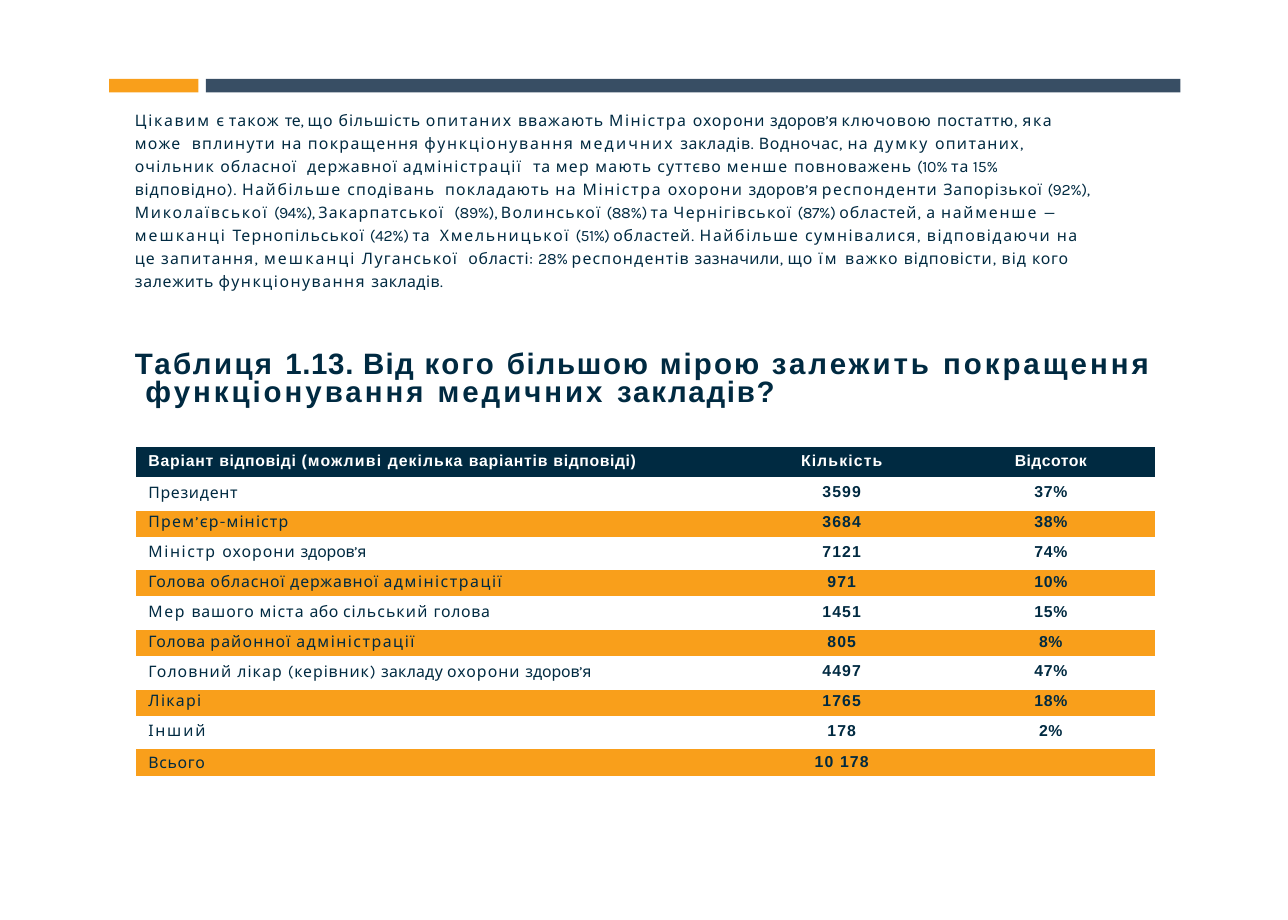
from lxml import etree
from pptx import Presentation
from pptx.dml.color import RGBColor
from pptx.enum.shapes import MSO_SHAPE
from pptx.enum.text import MSO_ANCHOR, MSO_AUTO_SIZE, PP_ALIGN
from pptx.oxml.ns import qn
from pptx.util import Inches, Pt

NAVY = RGBColor(0x00, 0x2A, 0x41)
SLATE = RGBColor(0x38, 0x4E, 0x64)
ORANGE = RGBColor(0xF9, 0x9F, 0x1B)
WHITE = RGBColor(0xFF, 0xFF, 0xFF)

# Each run is its text and its letter spacing in points
TITLE = [
    ("Таблиця ", 1.1), ("1.13. ", 0.3), ("Від ", 0.6), ("кого ", 1.1),
    ("більшою ", 0.8), ("мірою ", 1),
    ("залежить покращення функціонування медичних ", 1.4), ("закладів?", 0.8),
]
BODY = [
    ("Цікавим ", 0.8), ("є ", 0.2), ("також ", 0.5), ("те, ", -0.1), ("що ", 0.5),
    ("більшість ", 0.4), ("опитаних ", 0.7), ("вважають ", 0.5), ("Міністра ", 0.7),
    ("охорони ", 0.4), ("здоров’я ", 0), ("ключовою ", 0.5), ("постаттю, ", 0.3),
    ("яка ", 0.7), ("може  ", 0.6), ("вплинути на покращення ", 0.6),
    ("функціонування ", 0.8), ("медичних ", 0.9), ("закладів. Водночас, ", 0.3),
    ("на ", 0.6), ("думку ", 0.9), ("опитаних, очільник ", 0.6), ("обласної  ", 0.5),
    ("державної ", 0.5), ("адміністрації  ", 0.7), ("та ", 0.4), ("мер мають ", 0.6),
    ("суттєво ", 0.5), ("менше ", 0.7), ("повноважень ", 0.5), ("(10% ", -0.2),
    ("та", 0.4), (" 15% ", -0.1), ("відповідно). ", 0.4), ("Найбільше ", 0.7),
    ("сподівань  покладають ", 0.55), ("на ", 0.7), ("Міністра ", 0.8),
    ("охорони ", 0.6), ("здоров’я ", 0.1), ("респонденти ", 0.6),
    ("Запорізької ", 0.4), ("(92%), ", -0.2), ("Миколаївської ", 0.8),
    ("(94%), ", -0.3), ("Закарпатської  ", 0.6), ("(89%), ", -0.2),
    ("Волинської ", 0.6), ("(88%) ", -0.2), ("та ", 0.4), ("Чернігівської ", 0.6),
    ("(87%) ", -0.2), ("областей, ", 0.4), ("а ", 0.5), ("найменше ", 0.8),
    ("— ", 0.7), ("мешканці ", 0.9), ("Тернопільської ", 0.5), ("(42%) ", -0.2),
    ("та  ", 0.4), ("Хмельницької ", 0.8), ("(51%) ", -0.3), ("областей. ", 0.4),
    ("Найбільше сумнівалися, відповідаючи на ", 0.7), ("це ", 0.5),
    ("запитання, ", 0.6), ("мешканці ", 0.9), ("Луганської  ", 0.6),
    ("області: ", 0.3), ("28% ", -0.1), ("респондентів ", 0.5),
    ("зазначили, ", 0.1), ("що ", 0.5), ("їм ", 1.1), ("важко ", 0.6),
    ("відповісти, ", 0.4), ("від ", 0.5), ("кого залежить ", 0.3),
    ("функціонування ", 0.7), ("закладів.", 0.2),
]
ROWS = [
    ([("Варіант ", 0.35), ("відповіді ", 0.25), ("(можливі ", 0.55), ("декілька ", 0.45),
      ("варіантів ", 0.35), ("відповіді)", 0.25)], "Кількість", "Відсоток"),
    ([("Президент", 0.25)], "3599", "37%"),
    ([("Прем’єр-міністр", 0.55)], "3684", "38%"),
    ([("Міністр ", 0.75), ("охорони ", 0.45), ("здоров’я", -0.1)], "7121", "74%"),
    ([("Голова ", 0.3), ("обласної державної ", 0.4), ("адміністрації", 0.7)], "971", "10%"),
    ([("Мер ", 0.7), ("вашого ", 0.4), ("міста ", 0.5), ("або ", 0.2),
      ("сільський ", 0.5), ("голова", 0.3)], "1451", "15%"),
    ([("Голова ", 0.3), ("районної ", 0.5), ("адміністрації", 0.7)], "805", "8%"),
    ([("Головний лікар ", 0.5), ("(керівник) ", 0.4), ("закладу ", 0.1),
      ("охорони ", 0.45), ("здоров’я", -0.1)], "4497", "47%"),
    ([("Лікарі", 0.6)], "1765", "18%"),
    ([("Інший", 0.8)], "178", "2%"),
    ([("Всього", 0.3)], "10 178", ""),
]


def add_runs(p, runs, font, size, color, bold):
    for text, spacing in runs:
        r = p.add_run()
        r.text = text
        r.font.name, r.font.size, r.font.bold = font, Pt(size), bold
        r.font.color.rgb = color
        r._r.get_or_add_rPr().set("spc", str(round(spacing * 100)))


def set_border(cell, side, width):
    ln = etree.Element(qn("a:ln" + side), w=str(Pt(width)))
    if width:
        fill = etree.SubElement(ln, qn("a:solidFill"))
        etree.SubElement(fill, qn("a:srgbClr"), val=str(WHITE))
    else:
        etree.SubElement(ln, qn("a:noFill"))
    # Borders come before the fill, in the order L, R, T, B
    cell._tc.get_or_add_tcPr().insert("LRTB".index(side), ln)


prs = Presentation()
prs.slide_width, prs.slide_height = Inches(8.5), Inches(6.07)
s = prs.slides.add_slide(prs.slide_layouts[5])

# Title and body text
title = s.shapes.title
title.left, title.top = Inches(0.88), Inches(2.26)
title.width, title.height = Inches(6.73), Inches(0.44)
body = s.shapes.add_textbox(Inches(0.88), Inches(0.69), Inches(6.35), Inches(1.08))
for sp, runs, font, size, bold, top, line, before in (
    (title, TITLE, "Arial", 14, True, 0.07, 0.77, 4.8),
    (body, BODY, "Karla", 7.5, False, 0.01, 1.22, 0),
):
    tf = sp.text_frame
    tf.word_wrap = True
    tf.auto_size = MSO_AUTO_SIZE.NONE
    tf.vertical_anchor = MSO_ANCHOR.TOP
    tf.margin_left = tf.margin_right = tf.margin_bottom = 0
    tf.margin_top = Inches(top)
    p = tf.paragraphs[0]
    p.alignment = PP_ALIGN.LEFT
    p.line_spacing, p.space_before = line, Pt(before)
    add_runs(p, runs, font, size, NAVY, bold)
    pPr = p._p.get_or_add_pPr()
    pPr.set("marL", str(Inches(0.01)))
    pPr.set("indent", "0")

# The second title line sits a little to the right of the first
pPr = title.text_frame.paragraphs[0]._p.get_or_add_pPr()
pPr.set("marL", str(Inches(0.08)))
pPr.set("indent", str(-Inches(0.07)))

# Table
frame = s.shapes.add_table(len(ROWS), 3, Inches(0.9), Inches(2.95), Inches(6.72), Inches(2.18))
table = frame.table
for col, width in zip(table.columns, (3.85, 1.5, 1.37)):
    col.width = Inches(width)
last = len(ROWS) - 1
for i, (answer, count, share) in enumerate(ROWS):
    table.rows[i].height = Inches(0.21) if i == 0 else Inches((2.18 - 0.21) / last)
    share_spacing = 0.3 if len(share) == 3 else 0.2
    for j, runs in enumerate((answer, [(count, 0.5)], [(share, share_spacing)])):
        cell = table.cell(i, j)
        cell.margin_left = cell.margin_right = cell.margin_bottom = 0
        cell.margin_top = Inches(0.04 if i == last else 0.03)
        if i % 2 == 0:
            cell.fill.solid()
            cell.fill.fore_color.rgb = ORANGE if i else NAVY
        else:
            cell.fill.background()
        for side, width in zip("LRTB", (0, 0, 2.25 if i else 0, 1 if i == last else 2.25)):
            set_border(cell, side, width)
        p = cell.text_frame.paragraphs[0]
        p.alignment = PP_ALIGN.CENTER if j else PP_ALIGN.LEFT
        p.space_before = Pt(2.4 if i == 0 else 2.8 if i == last else 2.5)
        p._p.get_or_add_pPr().set("marL", str(Inches((0.08, 0.11, 0)[j])))
        if runs[0][0]:
            plain = i > 0 and j == 0
            add_runs(p, runs, "Karla" if plain else "Arial", 7.5, NAVY if i else WHITE, not plain)
        else:
            etree.SubElement(p._p, qn("a:endParaRPr"), sz="750")

# Top bars
for left, width, color in ((1.36, 6.43, SLATE), (0.72, 0.59, ORANGE)):
    bar = s.shapes.add_shape(MSO_SHAPE.RECTANGLE, Inches(left), Inches(0.52), Inches(width), Inches(0.09))
    bar.shadow.inherit = False
    bar.fill.solid()
    bar.fill.fore_color.rgb = color
    bar.line.fill.background()

prs.save("out.pptx")
